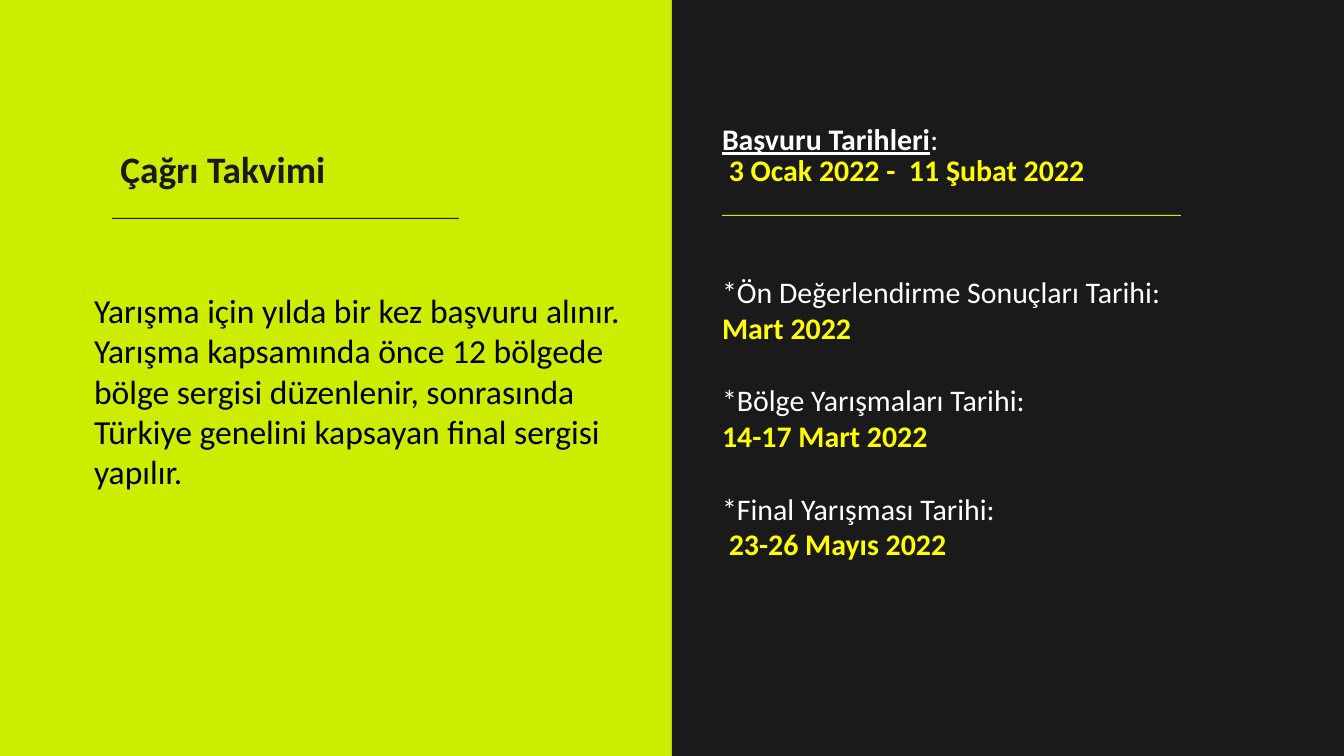
import dataclasses
import typing

import pptx
import pptx.dml.color
import pptx.enum.shapes
import pptx.enum.text
import pptx.oxml
import pptx.oxml.ns
import pptx.util

SLIDE_WIDTH, SLIDE_HEIGHT = 1344, 756
EMU_PER_PX = pptx.util.Inches(20) / SLIDE_WIDTH
FONT = "Calibri"
COLOURS = {
    "lime": "CCED00",
    "charcoal": "1B1A1A",
    "white": "FFFFFF",
    "yellow": "FFFF00",
    "black": "000000",
}


@dataclasses.dataclass(frozen=True)
class Box:
    left: int
    top: int
    width: int
    height: int

    def emu(self) -> list[int]:
        return [px(value) for value in dataclasses.astuple(self)]


@dataclasses.dataclass(frozen=True)
class Run:
    text: str
    colour: str
    bold: bool = False
    underline: bool = False


@dataclasses.dataclass(frozen=True)
class Milestone:
    label: str
    date: str


MILESTONES = [
    Milestone("*Ön Değerlendirme Sonuçları Tarihi:", "Mart 2022"),
    Milestone("*Bölge Yarışmaları Tarihi:", "14-17 Mart 2022"),
    Milestone("*Final Yarışması Tarihi:", " 23-26 Mayıs 2022"),
]


def px(value: int) -> int:
    return round(value * EMU_PER_PX)


def rgb(colour: str) -> pptx.dml.color.RGBColor:
    return pptx.dml.color.RGBColor.from_string(COLOURS[colour])


def add_rectangle(slide: typing.Any, box: Box, colour: str) -> typing.Any:
    shape = slide.shapes.add_shape(
        pptx.enum.shapes.MSO_SHAPE.RECTANGLE, *box.emu()
    )
    shape.shadow.inherit = False
    shape.fill.solid()
    shape.fill.fore_color.rgb = rgb(colour)
    shape.line.fill.background()
    return shape


def remove_bullet(paragraph: typing.Any) -> None:
    properties = paragraph._p.get_or_add_pPr()
    properties.set("marL", "0")
    properties.set("indent", "0")
    properties.append(
        pptx.oxml.parse_xml(f"<a:buNone {pptx.oxml.ns.nsdecls('a')}/>")
    )


def write_text(
    shape: typing.Any,
    box: Box,
    paragraphs: list[list[Run]],
    *,
    size: int,
    line_points: int | None = None,
    group_size: int = 0,
    group_gap: int = 0,
    insets: tuple[int, int] = (0, 0),
) -> None:
    """Place the shape and fill it; group_gap separates every group_size paragraphs."""
    shape.left, shape.top, shape.width, shape.height = box.emu()
    frame = shape.text_frame
    frame.word_wrap = True
    frame.auto_size = pptx.enum.text.MSO_AUTO_SIZE.SHAPE_TO_FIT_TEXT
    frame.vertical_anchor = pptx.enum.text.MSO_ANCHOR.TOP
    frame.margin_left = frame.margin_right = px(insets[0])
    frame.margin_top = frame.margin_bottom = px(insets[1])
    for index, runs in enumerate(paragraphs):
        paragraph = frame.add_paragraph() if index else frame.paragraphs[0]
        starts_group = index and group_size and index % group_size == 0
        paragraph.alignment = pptx.enum.text.PP_ALIGN.LEFT
        paragraph.space_before = pptx.util.Pt(group_gap if starts_group else 0)
        paragraph.line_spacing = pptx.util.Pt(line_points) if line_points else 1.0
        remove_bullet(paragraph)
        for item in runs:
            run = paragraph.add_run()
            run.text = item.text
            run.font.name = FONT
            run.font.size = pptx.util.Pt(size)
            run.font.bold = item.bold
            run.font.underline = item.underline
            run.font.color.rgb = rgb(item.colour)


def main() -> None:
    presentation = pptx.Presentation()
    presentation.slide_width = px(SLIDE_WIDTH)
    presentation.slide_height = px(SLIDE_HEIGHT)
    two_content = presentation.slide_layouts.get_by_name("Two Content")
    slide = presentation.slides.add_slide(two_content)
    slide.background.fill.solid()
    slide.background.fill.fore_color.rgb = rgb("lime")
    title, description, schedule = slide.placeholders

    half = SLIDE_WIDTH // 2
    panel = add_rectangle(slide, Box(half, 0, half, SLIDE_HEIGHT), "charcoal")
    title.element.addprevious(panel.element)  # behind the placeholders
    add_rectangle(slide, Box(112, 218, 347, 1), "charcoal")
    add_rectangle(slide, Box(722, 215, 459, 1), "lime")

    write_text(
        title,
        Box(112, 160, 347, 34),
        [[Run(" Çağrı Takvimi", "charcoal", bold=True)]],
        size=40,
        line_points=33,
    )
    write_text(
        description,
        Box(87, 287, 554, 210),
        [[Run(
            "Yarışma için yılda bir kez başvuru alınır. Yarışma kapsamında "
            "önce 12 bölgede bölge sergisi düzenlenir, sonrasında Türkiye "
            "genelini kapsayan final sergisi yapılır.",
            "black",
        )]],
        size=36,
        insets=(7, 3),
    )
    schedule_lines = []
    for milestone in MILESTONES:
        schedule_lines.append([Run(milestone.label, "white")])
        schedule_lines.append([Run(milestone.date, "yellow", bold=True)])
    write_text(
        schedule,
        Box(722, 274, 587, 351),
        schedule_lines,
        size=32,
        group_size=2,
        group_gap=39,
    )
    write_text(
        slide.shapes.add_textbox(0, 0, 0, 0),
        Box(722, 126, 459, 91),
        [
            [
                Run("Başvuru Tarihleri", "white", bold=True, underline=True),
                Run(":", "white"),
            ],
            [Run(" 3 Ocak 2022 -  11 Şubat 2022", "yellow", bold=True)],
        ],
        size=32,
        line_points=33,
    )
    presentation.save("out.pptx")


if __name__ == "__main__":
    main()
